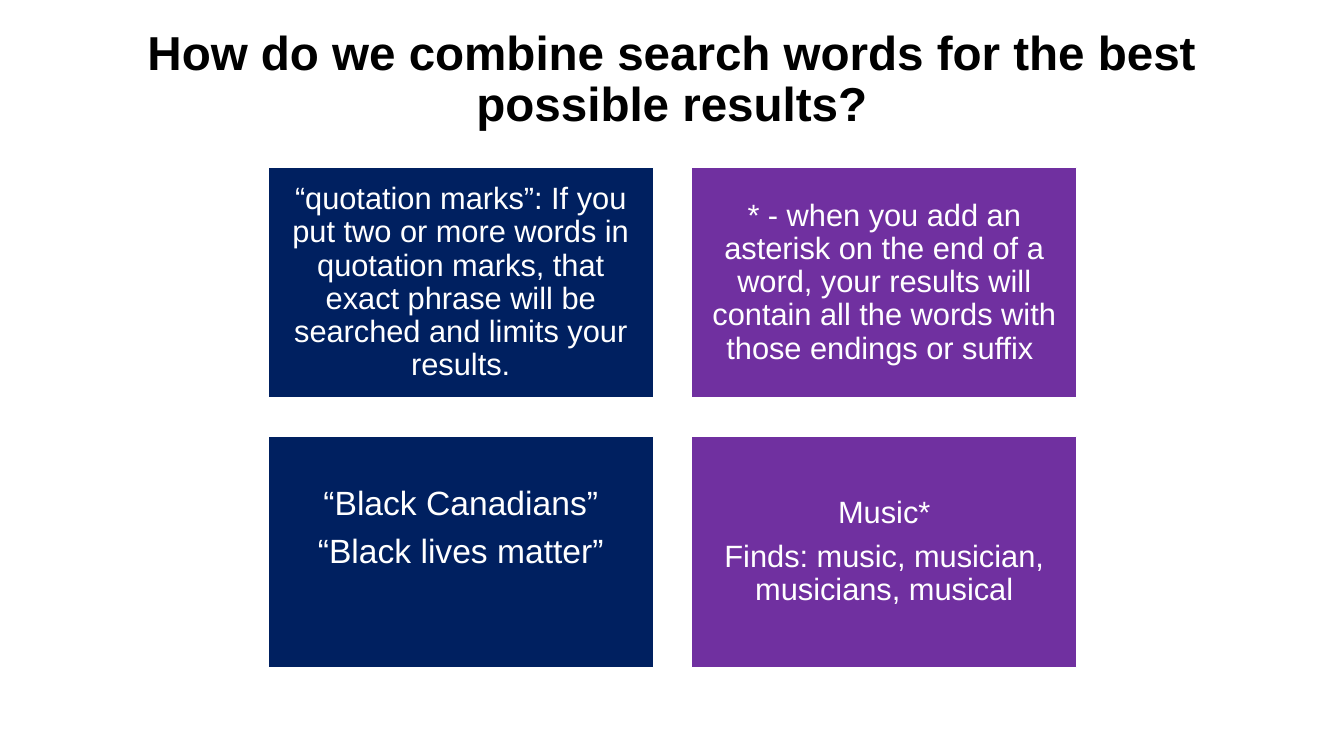
from pptx import Presentation
from pptx.dml.color import RGBColor
from pptx.enum.shapes import MSO_SHAPE
from pptx.enum.text import MSO_ANCHOR, MSO_AUTO_SIZE, PP_ALIGN
from pptx.util import Inches, Pt

# Colours and type
BLACK = RGBColor(0x00, 0x00, 0x00)
WHITE = RGBColor(0xFF, 0xFF, 0xFF)
NAVY = RGBColor(0x00, 0x20, 0x60)
PURPLE = RGBColor(0x70, 0x30, 0xA0)
FONT_NAME = "Arial"
LINE_SPACING = 0.9
SPACE_AFTER_SHARE = 0.35

# Grid of cards, in inches
GRID_LEFT, GRID_TOP = 2.66, 1.66
CARD_WIDTH, CARD_HEIGHT = 3.82, 2.29
GAP = 0.38
COLUMN_STEP = CARD_WIDTH + GAP
ROW_STEP = CARD_HEIGHT + GAP

TITLE = "How do we combine search words for the best possible results?"

# Each card: column, row, text size, bottom inset, paragraphs
CARDS = [
    (0, 0, 22, 0.09, [
        "“quotation marks”: If you put two or more words in quotation marks, "
        "that exact phrase will be searched and limits your results."]),
    (1, 0, 22, 0.09, [
        "* - when you add an asterisk on the end of a word, your results will "
        "contain all the words with those endings or suffix "]),
    (0, 1, 24, 0.56, ["“Black Canadians”", "“Black lives matter”"]),
    (1, 1, 22, 0.09, ["Music*", "Finds: music, musician, musicians, musical"]),
]
COLUMN_COLOURS = [NAVY, PURPLE]


def set_attributes(target, values):
    for name, value in values.items():
        setattr(target, name, value)


def format_paragraph(paragraph, text, size, colour, bold=False, space_after=0):
    paragraph.text = text
    set_attributes(paragraph, {
        "alignment": PP_ALIGN.CENTER,
        "line_spacing": LINE_SPACING,
        "space_before": Pt(0),
        "space_after": Pt(space_after),
    })
    font = paragraph.runs[0].font
    set_attributes(font, {"name": FONT_NAME, "size": Pt(size), "bold": bold})
    font.color.rgb = colour


def add_title(slide):
    title = slide.shapes.title
    set_attributes(title, {
        "left": Inches(0.92), "top": Inches(0.21),
        "width": Inches(11.49), "height": Inches(1.18),
    })
    set_attributes(title.text_frame, {
        "word_wrap": True,
        "auto_size": MSO_AUTO_SIZE.NONE,
        "vertical_anchor": MSO_ANCHOR.MIDDLE,
    })
    format_paragraph(title.text_frame.paragraphs[0], TITLE, 34, BLACK, bold=True)


def add_card(slide, column, row, size, bottom_inset, texts):
    shape = slide.shapes.add_shape(
        MSO_SHAPE.RECTANGLE,
        Inches(GRID_LEFT + column * COLUMN_STEP),
        Inches(GRID_TOP + row * ROW_STEP),
        Inches(CARD_WIDTH), Inches(CARD_HEIGHT))
    shape.shadow.inherit = False
    shape.fill.solid()
    shape.fill.fore_color.rgb = COLUMN_COLOURS[column]
    shape.line.color.rgb = WHITE
    shape.line.width = Pt(1)

    frame = shape.text_frame
    inset = Inches(0.09)
    set_attributes(frame, {
        "word_wrap": True,
        "vertical_anchor": MSO_ANCHOR.MIDDLE,
        "margin_left": inset, "margin_right": inset,
        "margin_top": inset, "margin_bottom": Inches(bottom_inset),
    })
    for index, text in enumerate(texts):
        paragraph = frame.add_paragraph() if index else frame.paragraphs[0]
        format_paragraph(paragraph, text, size, WHITE,
                         space_after=round(size * SPACE_AFTER_SHARE, 1))


def main():
    presentation = Presentation()
    presentation.slide_width = Inches(13.33)
    presentation.slide_height = Inches(7.5)
    slide = presentation.slides.add_slide(presentation.slide_layouts[5])

    add_title(slide)
    for card in CARDS:
        add_card(slide, *card)

    presentation.save("out.pptx")


if __name__ == "__main__":
    main()
